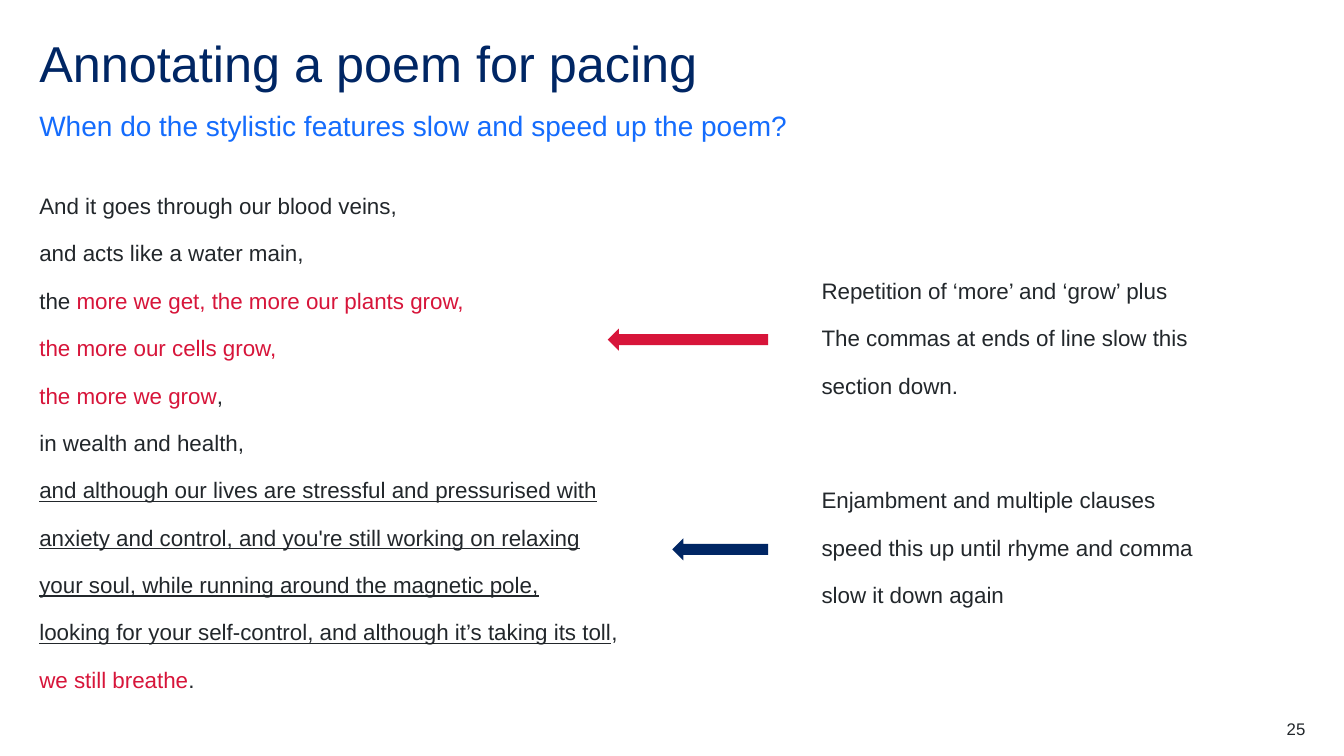
from pptx import Presentation
from pptx.dml.color import RGBColor
from pptx.enum import shapes, text
from pptx.util import Pt

NAVY = RGBColor(0x00, 0x26, 0x64)
BLUE = RGBColor(0x14, 0x6C, 0xFD)
RED = RGBColor(0xD7, 0x15, 0x3A)
INK = RGBColor(0x22, 0x27, 0x2B)

LEFT, WIDE = 28.1, 904.3
POEM = [
    [("And it goes through our blood veins,", INK, False)],
    [("and acts like a water main,", INK, False)],
    [("the ", INK, False),
     ("more we get, the more our plants grow,", RED, False)],
    [("the more our cells grow,", RED, False)],
    [("the more we grow", RED, False), (",", INK, False)],
    [("in wealth and health,", INK, False)],
    [("and although our lives are stressful and pressurised with", INK, True)],
    [("anxiety and control, and you're still working on relaxing", INK, True)],
    [("your soul, while running around the magnetic pole,", INK, True)],
    [("looking for your self-control, and although it’s taking its toll",
      INK, True), (",", INK, False)],
    [("we still breathe", RED, False), (".", INK, False)],
]
NOTES = [
    (195.1, 114.5, RED, ["Repetition of ‘more’ and ‘grow’ plus",
                         "The commas at ends of line slow this",
                         "section down."]),
    (344.9, 68.4, NAVY, ["Enjambment and multiple clauses",
                         "speed this up until rhyme and comma",
                         "slow it down again"]),
]


def add_text(slide, box, lines, size, color=INK, lead=1.14, after=12,
             wrap=True, anchor=text.MSO_ANCHOR.TOP, align=text.PP_ALIGN.LEFT):
    frame = slide.shapes.add_textbox(*map(Pt, box)).text_frame
    frame.word_wrap = wrap
    frame.vertical_anchor = anchor
    frame.margin_left = frame.margin_right = 0
    frame.margin_top = frame.margin_bottom = 0
    for i, line in enumerate(lines):
        para = frame.add_paragraph() if i else frame.paragraphs[0]
        para.alignment = align
        para.line_spacing = lead
        para.space_after = Pt(after)
        para.font.name = "Arial"
        para.font.size = Pt(size)
        para.font.color.rgb = color
        if isinstance(line, str):
            para.add_run().text = line
            continue
        for words, tint, under in line:
            run = para.add_run()
            run.text = words
            run.font.color.rgb = tint
            if under:
                run.font.underline = True


def add_head(slide, left, top, width):
    add_text(slide, (left, top, width, 43.2), ["Annotating a poem for pacing"],
             36, NAVY, lead=0.9, after=0)
    add_text(slide, (left, top + 49, width, 24.5),
             ["When do the stylistic features slow and speed up the poem?"],
             20, BLUE, lead=1.5, anchor=text.MSO_ANCHOR.BOTTOM)


def add_poem(slide, left, top, width, height):
    add_text(slide, (left, top, width, height), POEM, 16)


def add_note(slide, left, top, width, height, reach, color, lines):
    add_text(slide, (left, top, width, height), lines, 16, wrap=False)
    arrow = slide.shapes.add_shape(
        shapes.MSO_SHAPE.LEFT_ARROW, Pt(left - 38.2 - reach),
        Pt(top + (height - 15.8) / 2), Pt(reach), Pt(15.8))
    arrow.shadow.inherit = False
    arrow.fill.solid()
    arrow.fill.fore_color.rgb = color
    arrow.line.fill.background()


def add_foot(slide, left, top, width, height):
    add_text(slide, (left, top, width, height), ["25"], 12, lead=1, after=0,
             align=text.PP_ALIGN.RIGHT)


def main():
    deck = Presentation()
    deck.slide_width, deck.slide_height = Pt(960), Pt(540)
    slide = deck.slides.add_slide(deck.slide_layouts[6])
    add_head(slide, LEFT, 28.1, WIDE)
    add_poem(slide, LEFT, 134.6, 424.1, 378.7)
    for top, reach, color, lines in NOTES:
        add_note(slide, 586.8, top, 275, 95, reach, color, lines)
    add_foot(slide, LEFT + WIDE - 56.9, 513.4, 56.9, 14.4)
    deck.save("out.pptx")


if __name__ == "__main__":
    main()
